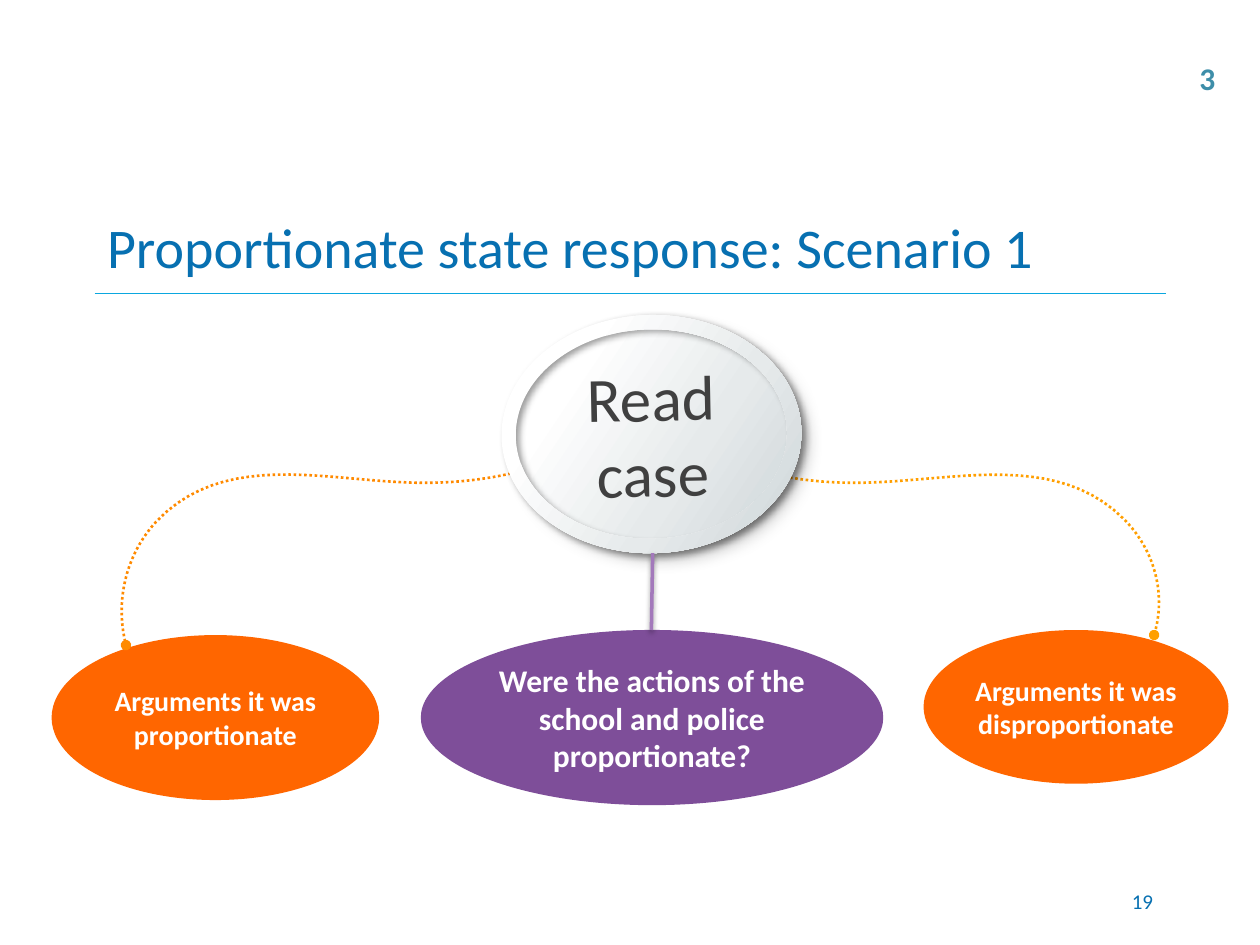
"""Builds the slide on a proportionate state response, scenario 1."""
from lxml import etree
from pptx import Presentation
from pptx.dml.color import RGBColor
from pptx.enum.dml import MSO_LINE
from pptx.enum.shapes import MSO_CONNECTOR, MSO_SHAPE
from pptx.enum.text import MSO_ANCHOR, PP_ALIGN
from pptx.oxml.ns import qn
from pptx.util import Inches, Pt

OVAL, DONUT = MSO_SHAPE.OVAL, MSO_SHAPE.DONUT
STRAIGHT, DOTTED = MSO_CONNECTOR.STRAIGHT, MSO_LINE.ROUND_DOT
MIDDLE, TOP = MSO_ANCHOR.MIDDLE, MSO_ANCHOR.TOP
LEFT, CENTER, RIGHT = PP_ALIGN.LEFT, PP_ALIGN.CENTER, PP_ALIGN.RIGHT

THEME = {
    "font": "Calibri",
    "blue": "0770B1", "rule": "0BA7DF", "teal": "3E8EA9",
    "orange": "FF6600", "purple": "7E4E99", "stem": "A379BB",
    "white": "FFFFFF", "dark": "404040", "shadow": "000000",
    "silver": [(23, "FFFFFF"), (63, "E6EAEB"), (100, "CDD5D8")],
    "title": 32, "hub": 36, "question": 18, "argument": 16, "page": 12, "marker": 18,
}

TITLE = ("Proportionate state response: Scenario 1", (0.75, 1.58, 8.5, 0.75))
PAGE = ("19", (7.17, 6.95, 2.08, 0.4))
MARKER = ("3", (9.42, 0.42, 0.33, 0.4))
HUB = ("Read case", (4.06, 2.55, 2.23, 1.79))
RING_BOX = (3.98, 2.5, 2.38, 1.89)
RING_THICKNESS = 0.06
HUB_TILT = 358.8
QUESTION = ("Were the actions of the school and police proportionate?", (3.34, 5, 3.67, 1.39))
ARGUMENTS = [
    ("Arguments it was proportionate", (0.41, 5.04, 2.6, 1.31), "FF8A00",
     [(4.17, 3.73), (3.87, 3.81), (3.57, 3.84), (3.26, 3.83), (2.56, 3.81),
      (1.77, 3.58), (1.24, 4.14), (1, 4.4), (0.91, 4.77), (1, 5.12)]),
    ("Arguments it was disproportionate", (7.33, 5, 2.42, 1.22), "FF9F00",
     [(5.99, 3.73), (6.29, 3.81), (6.59, 3.84), (6.9, 3.83), (7.6, 3.81),
      (8.39, 3.59), (8.92, 4.12), (9.16, 4.36), (9.26, 4.71), (9.16, 5.04)]),
]
TITLE_RULE = ((0.75, 2.33), (9.25, 2.33))
STEM = ((5.18, 4.39), (5.17, 5))
CURVE_STEPS = 20


def rgb(value):
    return RGBColor.from_string(value)


def write(frame, text, size, color, bold=False, align=LEFT, anchor=MIDDLE,
          insets=(0.1, 0.05), wrap=True):
    frame.word_wrap = wrap
    frame.vertical_anchor = anchor
    frame.margin_left = frame.margin_right = Inches(insets[0])
    frame.margin_top = frame.margin_bottom = Inches(insets[1])
    paragraph = frame.paragraphs[0]
    paragraph.alignment = align
    run = paragraph.add_run()
    run.text = text
    run.font.name = THEME["font"]
    run.font.size = Pt(THEME[size])
    run.font.bold = bold
    run.font.color.rgb = rgb(THEME[color])


def add_label(slide, content, size, color, **text_format):
    text, box = content
    label = slide.shapes.add_textbox(*map(Inches, box))
    write(label.text_frame, text, size, color, **text_format)


def add_round(slide, preset, box, fill=None):
    shape = slide.shapes.add_shape(preset, *map(Inches, box))
    shape.line.fill.background()
    shape.shadow.inherit = False
    if fill:
        shape.fill.solid()
        shape.fill.fore_color.rgb = rgb(THEME[fill])
    return shape


def add_shadow(shape, blur, distance, angle):
    properties = shape._element.spPr
    effects = properties.find(qn("a:effectLst"))
    outer = etree.SubElement(effects, qn("a:outerShdw"), blurRad=str(Pt(blur)),
                             dist=str(Pt(distance)), dir=str(angle * 60000),
                             algn="ctr", rotWithShape="0")
    color = etree.SubElement(outer, qn("a:srgbClr"), val=THEME["shadow"])
    etree.SubElement(color, qn("a:alpha"), val="38000")


def make_silver(shape, blur, distance):
    shape.rotation = HUB_TILT
    shape.fill.gradient()
    shape.fill.gradient_angle = 325
    stops = shape._element.spPr.find(qn("a:gradFill")).find(qn("a:gsLst"))
    for stop in list(stops):
        stops.remove(stop)
    for position, color in THEME["silver"]:
        stop = etree.SubElement(stops, qn("a:gs"), pos=str(position * 1000))
        etree.SubElement(stop, qn("a:srgbClr"), val=color)
    add_shadow(shape, blur, distance, 39)


def add_line(slide, ends, color, width):
    start, end = ends
    line = slide.shapes.add_connector(STRAIGHT, *map(Inches, start + end))
    line.line.color.rgb = rgb(THEME[color])
    line.line.width = Pt(width)
    etree.SubElement(line._element.spPr, qn("a:effectLst"))
    return line


def bezier_points(controls):
    points = [controls[0]]
    for first in range(0, len(controls) - 1, 3):
        segment = controls[first:first + 4]
        for step in range(1, CURVE_STEPS + 1):
            t = step / CURVE_STEPS
            weights = ((1 - t) ** 3, 3 * t * (1 - t) ** 2, 3 * t * t * (1 - t), t ** 3)
            points.append(tuple(sum(w * point[axis] for w, point in zip(weights, segment))
                                for axis in (0, 1)))
    return points


def add_dotted_curve(slide, controls, color):
    points = [(Inches(x), Inches(y)) for x, y in bezier_points(controls)]
    builder = slide.shapes.build_freeform(*points[0])
    builder.add_line_segments(points[1:], close=False)
    curve = builder.convert_to_shape()
    curve.fill.background()
    curve.shadow.inherit = False
    curve.line.color.rgb = rgb(color)
    curve.line.width = Pt(1.5)
    curve.line.dash_style = DOTTED
    outline = curve._element.spPr.find(qn("a:ln"))
    for end in ("a:headEnd", "a:tailEnd"):
        etree.SubElement(outline, qn(end), type="oval")


def main():
    deck = Presentation()
    deck.slide_width, deck.slide_height = Inches(10), Inches(7.5)
    slide = deck.slides.add_slide(deck.slide_layouts[5])

    heading, heading_box = TITLE
    title = slide.shapes.title
    title.left, title.top, title.width, title.height = map(Inches, heading_box)
    write(title.text_frame, heading, "title", "blue")
    add_line(slide, TITLE_RULE, "rule", 0.75)
    add_label(slide, PAGE, "page", "blue", align=RIGHT)

    oval_text = {"align": CENTER, "insets": (0.04, 0.05)}
    for text, box, curve_color, controls in ARGUMENTS:
        argument = add_round(slide, OVAL, box, "orange")
        write(argument.text_frame, text, "argument", "white", bold=True, **oval_text)
        add_dotted_curve(slide, controls, curve_color)

    question_text, question_box = QUESTION
    question = add_round(slide, OVAL, question_box, "purple")
    write(question.text_frame, question_text, "question", "white", bold=True, **oval_text)

    hub_text, hub_box = HUB
    hub = add_round(slide, OVAL, hub_box)
    make_silver(hub, 12, 7.1)
    write(hub.text_frame, hub_text, "hub", "dark", align=CENTER, insets=(0.04, 0.04))
    ring = add_round(slide, DONUT, RING_BOX)
    ring.adjustments[0] = RING_THICKNESS
    make_silver(ring, 4, 2.8)

    stem = add_line(slide, STEM, "stem", 2)
    add_shadow(stem, 3.1, 1.6, 90)
    add_label(slide, MARKER, "marker", "teal", bold=True, anchor=TOP, wrap=False)
    deck.save("out.pptx")


if __name__ == "__main__":
    main()
